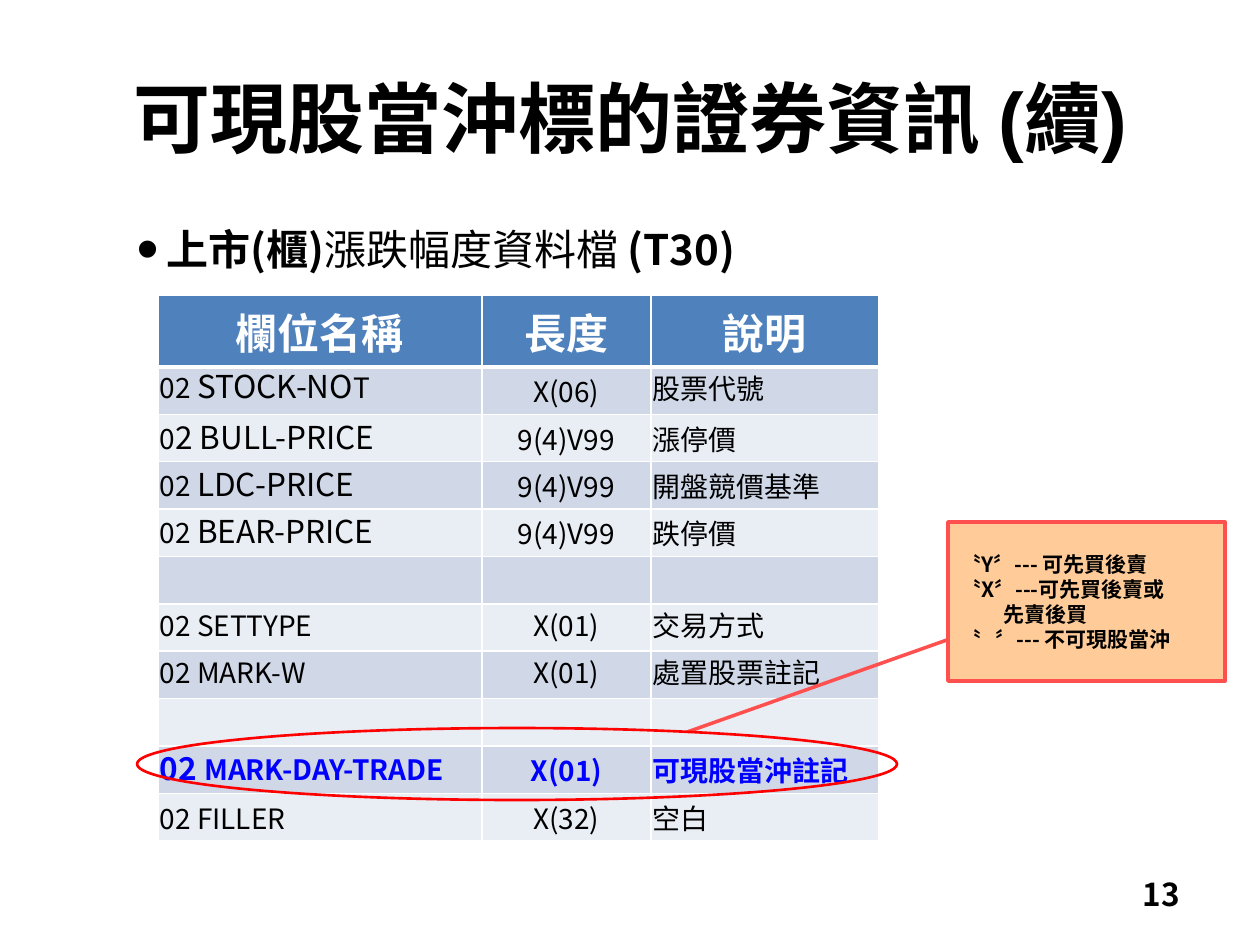
"""Build the slide on day-trading security data fields."""
from lxml import etree
from pptx import Presentation
from pptx import util as u
from pptx.dml.color import RGBColor
from pptx.enum import shapes, text
from pptx.oxml import ns

FONT = "Noto Sans CJK SC"
COLORS = {
    "black": "000000", "white": "FFFFFF", "blue": "0000FF", "red": "FF0000",
    "header": "4F81BD", "odd": "D0D8E8", "even": "E9EDF4",
    "callout": "FFCC99", "callout_line": "FF5050",
}
LEFT, CENTER = text.PP_ALIGN.LEFT, text.PP_ALIGN.CENTER
RIGHT, JUSTIFY = text.PP_ALIGN.RIGHT, text.PP_ALIGN.JUSTIFY
TOP, MIDDLE = text.MSO_ANCHOR.TOP, text.MSO_ANCHOR.MIDDLE

COLUMN_WIDTHS = [324, 169, 228]
HEADER_HEIGHT, BODY_HEIGHT = 72, 474
HEADERS = ["欄位名稱", "長度", "說明"]
FIELDS = [
    ([("02 ", 16), ("STOCK-NO", 18), ("T", 16)], "X(06)", "股票代號"),
    ([("0", 16), ("2 BULL-PRICE", 18)], "9(4)V99", "漲停價"),
    ([("02 ", 16), ("LDC-PRICE", 18)], "9(4)V99", "開盤競價基準"),
    ([("02 ", 16), ("BEAR-PRICE", 18)], "9(4)V99", "跌停價"),
    ([], "", ""),
    ([("02 SETTYPE", 16)], "X(01)", "交易方式"),
    ([("02 MARK-W", 16)], "X(01)", "處置股票註記"),
    ([], "", ""),
    ([("02 ", 18), ("MARK-DAY-TRADE", 16)], "X(01)", "可現股當沖註記"),
    ([("02 FILLER", 16)], "X(32)", "空白"),
]
MARKED_ROW = 9
TOP_CELLS = {(1, 0), (1, 2)} | {(row, column) for row in (6, 7) for column in range(3)}


def px(length):
    """Turn pixels into EMU."""
    return u.Emu(round(length * 914400 / 126))


def rgb(name):
    """Look up a named colour."""
    return RGBColor.from_string(COLORS[name])


def add_child(parent, tag, **attributes):
    """Append a DrawingML element to a parent."""
    child = etree.SubElement(parent, ns.qn(tag))
    for key, value in attributes.items():
        child.set(key, str(value))
    return child


def write(paragraph, runs, size=16, color="black", bold=False, font=FONT,
          align=LEFT, spacing=None, indent=0, hanging=0, bullet=None):
    """Fill a paragraph with text, or with runs of (text, format overrides)."""
    properties = paragraph._p.get_or_add_pPr()
    if indent:
        properties.set("marL", str(px(indent)))
        properties.set("indent", str(-px(hanging)))
    if bullet:
        add_child(properties, "a:buSzPct", val=150000)
        add_child(properties, "a:buFont", typeface="Arial")
        add_child(properties, "a:buChar", char=bullet)
    paragraph.alignment = align
    if spacing:
        paragraph.line_spacing = u.Pt(spacing)
    paragraph.font.size = u.Pt(size)
    base = {"size": size, "color": color, "bold": bold, "font": font}
    for content, changes in [(runs, {})] if isinstance(runs, str) else runs:
        if not content:
            continue
        style = {**base, **changes}
        run = paragraph.add_run()
        run.text = content
        run.font.size = u.Pt(style["size"])
        run.font.bold = style["bold"]
        run.font.color.rgb = rgb(style["color"])
        run.font.name = style["font"]
        add_child(run._r.get_or_add_rPr(), "a:ea", typeface=FONT)


def add_title(slide, box, runs, **style):
    """Place and fill the title placeholder."""
    title = slide.shapes.title
    title.left, title.top, title.width, title.height = map(px, box)
    title.text_frame.vertical_anchor = MIDDLE
    write(title.text_frame.paragraphs[0], runs, **style)


def add_text(slide, box, runs, **style):
    """Add a one-paragraph text box."""
    frame = slide.shapes.add_textbox(*map(px, box)).text_frame
    frame.word_wrap = True
    frame.vertical_anchor = MIDDLE
    write(frame.paragraphs[0], runs, **style)


def add_shape(slide, kind, box, line, width, fill=None):
    """Add an outlined preset shape."""
    shape = slide.shapes.add_shape(kind, *map(px, box))
    shape.shadow.inherit = False
    shape.line.color.rgb = rgb(line)
    shape.line.width = u.Pt(width)
    if fill:
        shape.fill.solid()
        shape.fill.fore_color.rgb = rgb(fill)
    else:
        shape.fill.background()
    return shape


def add_callout(slide, box, lines):
    """Add the line callout with its explanation."""
    shape = add_shape(slide, shapes.MSO_SHAPE.LINE_CALLOUT_1, box,
                      "callout_line", 2, "callout")
    for index, value in enumerate([0.74, 0, 1.32, -0.94]):
        shape.adjustments[index] = value
    frame = shape.text_frame
    frame.word_wrap = True
    frame.vertical_anchor = MIDDLE
    for index, (line, indent) in enumerate(lines):
        paragraph = frame.add_paragraph() if index else frame.paragraphs[0]
        write(paragraph, line, size=12, bold=True, indent=indent)


def format_cell(cell, fill, anchor, bottom=1):
    """Set the fill, insets, anchor and white borders of a cell."""
    cell.margin_left = cell.margin_right = px(2)
    cell.margin_top = cell.margin_bottom = 0
    cell.vertical_anchor = anchor
    properties = cell._tc.get_or_add_tcPr()
    for side, width in zip("LRTB", (1, 1, 1, bottom)):
        border = add_child(properties, f"a:ln{side}", w=u.Pt(width))
        solid = add_child(border, "a:solidFill")
        add_child(solid, "a:srgbClr", val=COLORS["white"])
    cell.fill.solid()
    cell.fill.fore_color.rgb = rgb(fill)


def add_field_table(slide, left, top):
    """Add the table of record fields."""
    table = slide.shapes.add_table(
        len(FIELDS) + 1, len(HEADERS), px(left), px(top),
        px(sum(COLUMN_WIDTHS)), px(HEADER_HEIGHT + BODY_HEIGHT)).table
    for column, width in zip(table.columns, COLUMN_WIDTHS):
        column.width = px(width)
    for index, row in enumerate(table.rows):
        row.height = px(BODY_HEIGHT / len(FIELDS) if index else HEADER_HEIGHT)
    for column, header in enumerate(HEADERS):
        cell = table.cell(0, column)
        format_cell(cell, "header", MIDDLE, bottom=3)
        write(cell.text_frame.paragraphs[0], header, size=24, color="white",
              bold=True, align=CENTER)
    for row, (name, length, note) in enumerate(FIELDS, 1):
        marked = row == MARKED_ROW
        name_runs = [(part, {"size": size}) for part, size in name]
        for column, runs in enumerate([name_runs, length, note]):
            cell = table.cell(row, column)
            format_cell(cell, "odd" if row % 2 else "even",
                        TOP if (row, column) in TOP_CELLS else MIDDLE)
            write(cell.text_frame.paragraphs[0], runs, bold=marked, spacing=23,
                  color="blue" if marked else "black",
                  align=CENTER if column == 1 else JUSTIFY)


def main():
    """Build and save the slide."""
    presentation = Presentation()
    presentation.slide_width, presentation.slide_height = px(1260), px(945)
    slide = presentation.slides.add_slide(presentation.slide_layouts[5])
    add_title(slide, (63, 38, 1134, 158),
              [("可現股當沖標的證券資訊 ", {}), ("(續)", {"font": "Arial"})],
              size=44, bold=True, align=CENTER)
    add_text(slide, (898, 869, 294, 50), "13", size=18, bold=True, align=RIGHT)
    add_field_table(slide, 158, 295)
    add_callout(slide, (948, 522, 277, 159), [
        ("〝Y〞--- 可先買後賣", 0), ("〝X〞---可先買後賣或", 0),
        ("先賣後買", 43), ("〝   〞--- 不可現股當沖", 0)])
    add_text(slide, (84, 214, 704, 69),
             [("上市(櫃)", {}), ("漲跌幅度資料檔 ", {"bold": False}), ("(T30)", {})],
             size=24, bold=True, align=CENTER, indent=30, hanging=30, bullet="•")
    add_shape(slide, shapes.MSO_SHAPE.OVAL, (137, 728, 760, 72), "red", 1.5)
    presentation.save("out.pptx")


if __name__ == "__main__":
    main()
